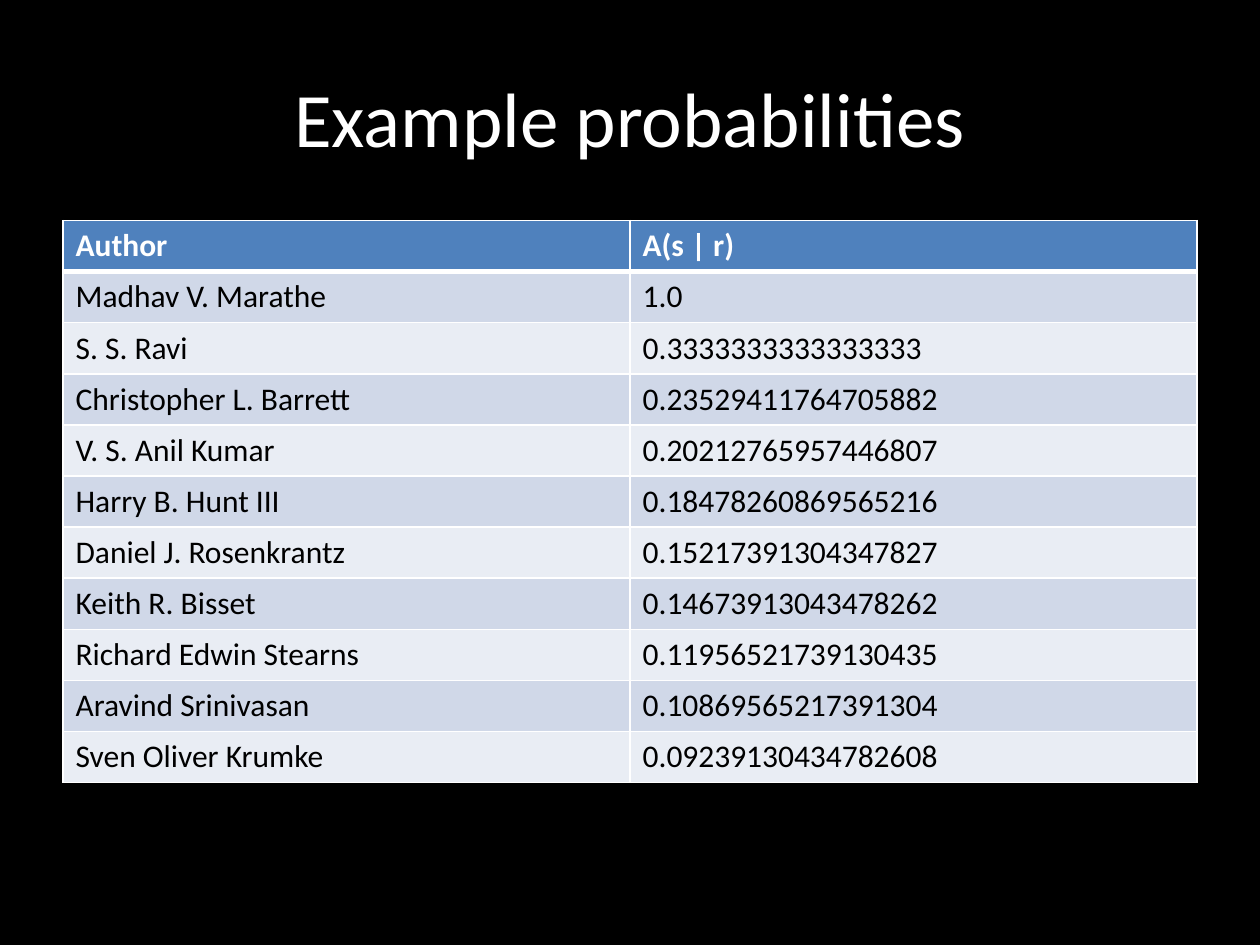
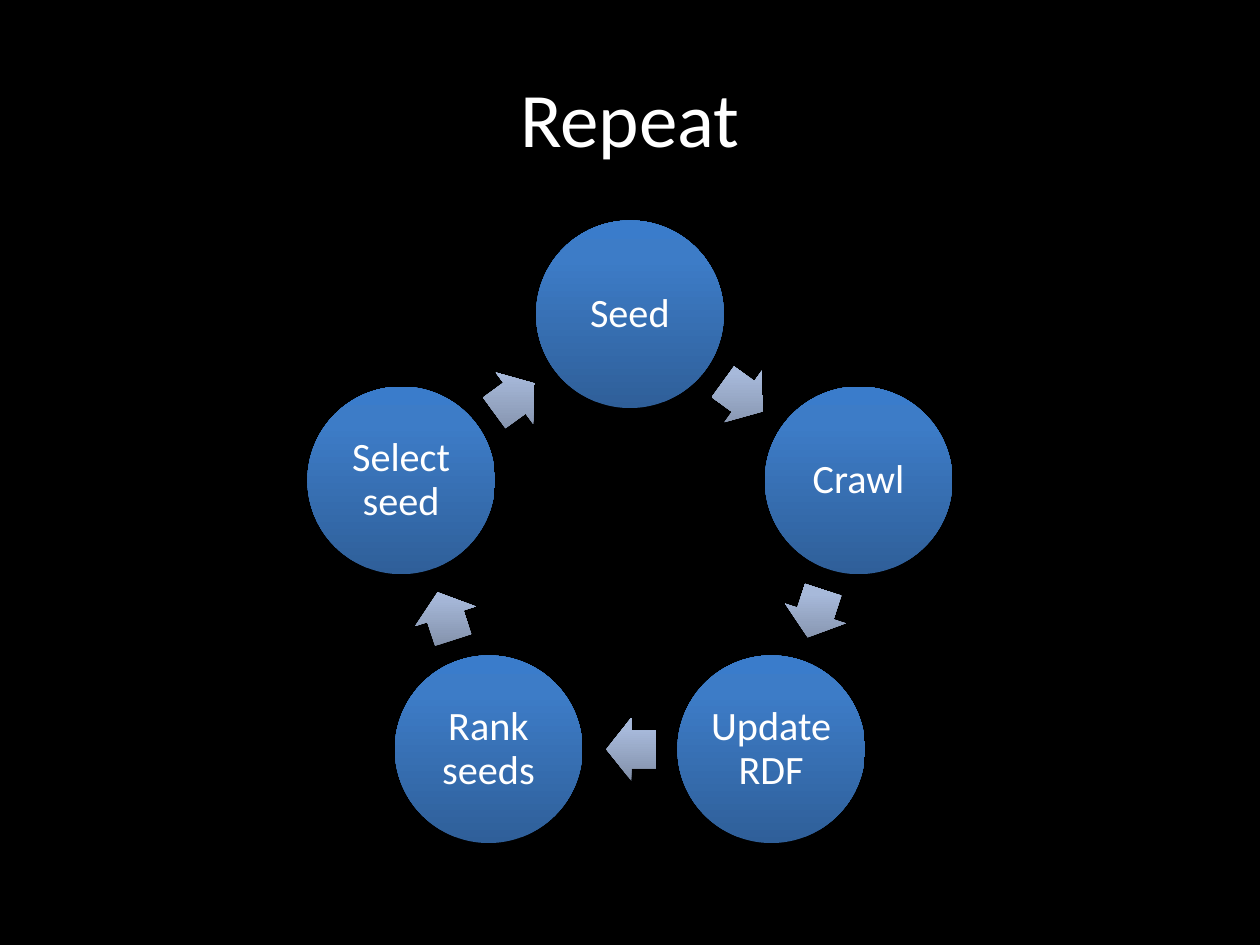
from math import cos, radians, sin

from lxml.etree import SubElement
from pptx import Presentation
from pptx.dml.color import RGBColor
from pptx.enum.shapes import MSO_SHAPE
from pptx.enum.text import MSO_ANCHOR, PP_ALIGN
from pptx.oxml import parse_xml
from pptx.oxml.ns import nsdecls, qn
from pptx.util import Pt

# Content
PROBABILITIES_TITLE = "Example probabilities"
PROBABILITIES = [
    ("Author", "A(s | r)"),
    ("Madhav V. Marathe", "1.0"),
    ("S. S. Ravi", "0.3333333333333333"),
    ("Christopher L. Barrett", "0.23529411764705882"),
    ("V. S. Anil Kumar", "0.20212765957446807"),
    ("Harry B. Hunt III", "0.18478260869565216"),
    ("Daniel J. Rosenkrantz", "0.15217391304347827"),
    ("Keith R. Bisset", "0.14673913043478262"),
    ("Richard Edwin Stearns", "0.11956521739130435"),
    ("Aravind Srinivasan", "0.10869565217391304"),
    ("Sven Oliver Krumke", "0.09239130434782608"),
]
CYCLE_TITLE = "Repeat"
CYCLE_STEPS = ["Seed", "Crawl", "Update RDF", "Rank seeds", "Select seed"]

# Shared look
FONT = "Calibri"
BLACK, WHITE = "000000", "FFFFFF"
HEADER_FILL = "4F81BD"
BAND_FILLS = ["E9EDF4", "D0D8E8"]
STEP_GRADIENT = [(0, "2F5F99"), (80, "3D7CC7"), (100, "3A7CCB")]
ARROW_GRADIENT = [(0, "818FA8"), (80, "A7B9DA"), (100, "A7BADC")]

# Layout, in points
MARGIN, CONTENT_WIDTH = 36, 648
TABLE_TOP, ROW_HEIGHT = 126, 29.2
CYCLE_X, CYCLE_Y, CYCLE_RADIUS = 360, 317, 137.4
STEP_SIZE = 107.2
ARROW_LENGTH, ARROW_WIDTH, ARROW_SETBACK = 28.6, 36.2, 0.8


def color(hex_string):
    return RGBColor.from_string(hex_string)


def write(frame, text, size=18, ink=WHITE, bold=False, align=PP_ALIGN.LEFT,
          spacing=1.0):
    frame.word_wrap = True
    paragraph = frame.paragraphs[0]
    paragraph.alignment = align
    paragraph.line_spacing = spacing
    run = paragraph.add_run()
    run.text = text
    run.font.name = FONT
    run.font.size = Pt(size)
    run.font.bold = bold
    run.font.color.rgb = color(ink)


def add_titled_slide(deck, title):
    slide = deck.slides.add_slide(deck.slide_layouts[6])
    background = slide.background.fill
    background.solid()
    background.fore_color.rgb = color(BLACK)
    heading = slide.shapes.add_textbox(Pt(MARGIN), Pt(21.6), Pt(CONTENT_WIDTH), Pt(90))
    heading.text_frame.vertical_anchor = MSO_ANCHOR.MIDDLE
    write(heading.text_frame, title, size=44, align=PP_ALIGN.CENTER)
    return slide


def set_borders(cell, bottom):
    """Draw white cell borders, placed ahead of the cell's fill."""
    properties = cell._tc.get_or_add_tcPr()
    widths = {"a:lnL": 1, "a:lnR": 1, "a:lnT": 1, "a:lnB": bottom}
    for position, (side, width) in enumerate(widths.items()):
        line = SubElement(properties, qn(side), w=str(Pt(width)))
        fill = SubElement(line, qn("a:solidFill"))
        SubElement(fill, qn("a:srgbClr"), val=WHITE)
        properties.insert(position, line)


def add_gradient_shape(slide, preset, center, size, stops):
    """Add a shape whose gradient runs upwards whatever its rotation."""
    (x, y), (width, height) = center, size
    shape = slide.shapes.add_shape(preset, Pt(x - width / 2), Pt(y - height / 2),
                                   Pt(width), Pt(height))
    shape.shadow.inherit = False
    shape.line.fill.background()
    stop_list = "".join(
        f'<a:gs pos="{percent * 1000}"><a:srgbClr val="{tone}"/></a:gs>'
        for percent, tone in stops)
    gradient = parse_xml(
        f'<a:gradFill {nsdecls("a")} rotWithShape="0"><a:gsLst>{stop_list}</a:gsLst>'
        '<a:lin ang="16200000" scaled="0"/></a:gradFill>')
    shape._element.spPr.find(qn("a:prstGeom")).addnext(gradient)
    return shape


def build_probabilities(deck):
    slide = add_titled_slide(deck, PROBABILITIES_TITLE)
    row_count, column_count = len(PROBABILITIES), len(PROBABILITIES[0])
    table = slide.shapes.add_table(
        row_count, column_count, Pt(MARGIN), Pt(TABLE_TOP),
        Pt(CONTENT_WIDTH), Pt(ROW_HEIGHT * row_count)).table
    for r, values in enumerate(PROBABILITIES):
        table.rows[r].height = Pt(ROW_HEIGHT)
        header = r == 0
        for c, value in enumerate(values):
            cell = table.cell(r, c)
            cell.fill.solid()
            cell.fill.fore_color.rgb = color(HEADER_FILL if header else BAND_FILLS[r % 2])
            set_borders(cell, bottom=3 if header else 1)
            write(cell.text_frame, value, ink=WHITE if header else BLACK, bold=header)


def build_cycle(deck):
    slide = add_titled_slide(deck, CYCLE_TITLE)
    turn = 360 / len(CYCLE_STEPS)
    chord_distance = CYCLE_RADIUS * cos(radians(turn / 2))
    for i, step in enumerate(CYCLE_STEPS):
        # Step circle, clockwise from the top
        angle = radians(i * turn)
        center = (CYCLE_X + CYCLE_RADIUS * sin(angle),
                  CYCLE_Y - CYCLE_RADIUS * cos(angle))
        circle = add_gradient_shape(slide, MSO_SHAPE.OVAL, center,
                                    (STEP_SIZE, STEP_SIZE), STEP_GRADIENT)
        frame = circle.text_frame
        frame.margin_left = frame.margin_right = Pt(2.3)
        frame.margin_top = frame.margin_bottom = Pt(2.3)
        frame.vertical_anchor = MSO_ANCHOR.MIDDLE
        write(frame, step, size=23, align=PP_ALIGN.CENTER, spacing=0.9)

        # Arrow halfway to the next step, set back slightly
        heading = (i + 0.5) * turn
        across, down = sin(radians(heading)), -cos(radians(heading))
        middle = (CYCLE_X + chord_distance * across + ARROW_SETBACK * down,
                  CYCLE_Y + chord_distance * down - ARROW_SETBACK * across)
        arrow = add_gradient_shape(slide, MSO_SHAPE.RIGHT_ARROW, middle,
                                   (ARROW_LENGTH, ARROW_WIDTH), ARROW_GRADIENT)
        arrow.adjustments[0], arrow.adjustments[1] = 0.6, 0.5
        arrow.rotation = heading


def main():
    deck = Presentation()
    deck.slide_width, deck.slide_height = Pt(720), Pt(540)
    build_probabilities(deck)
    build_cycle(deck)
    deck.save("out.pptx")


if __name__ == "__main__":
    main()
